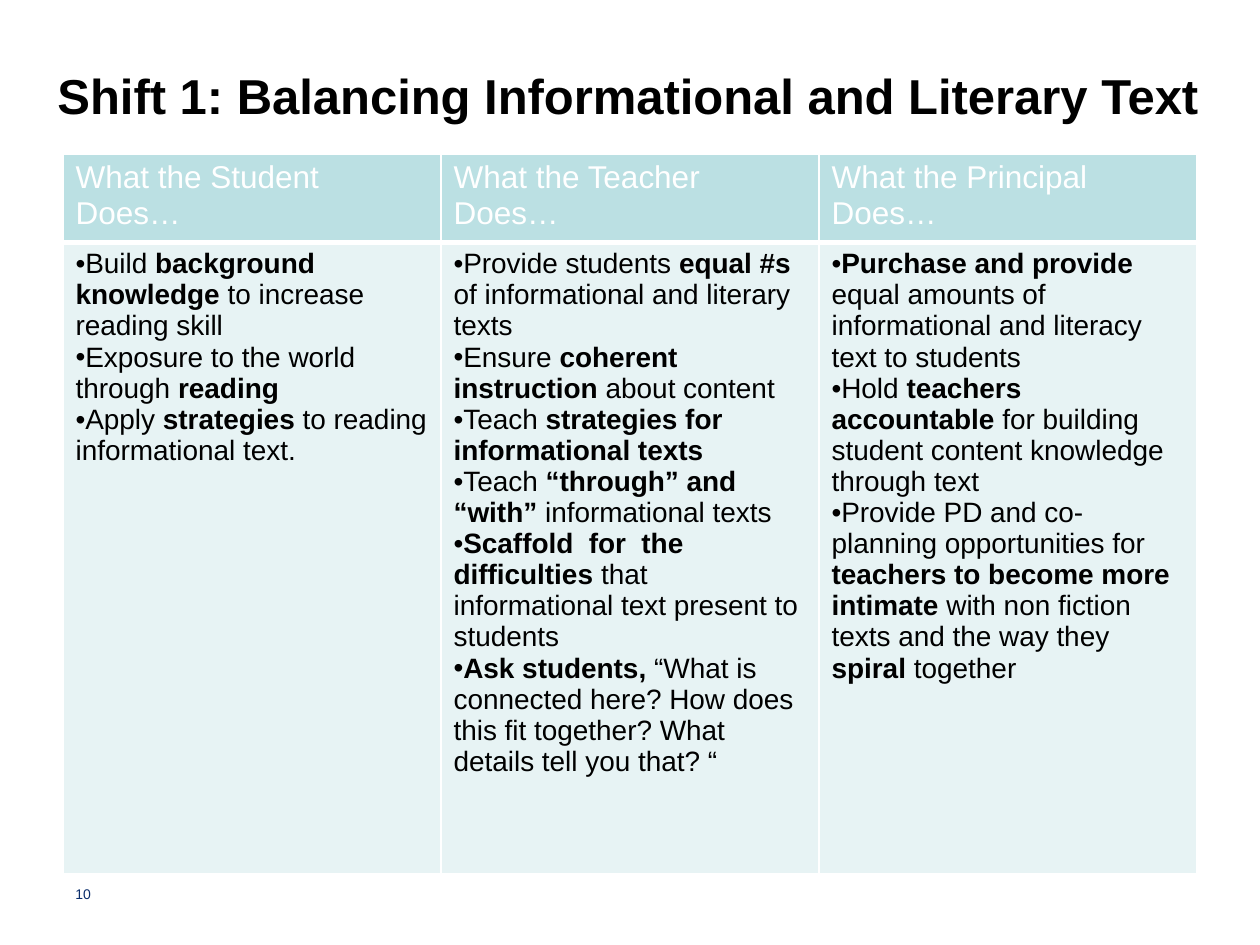
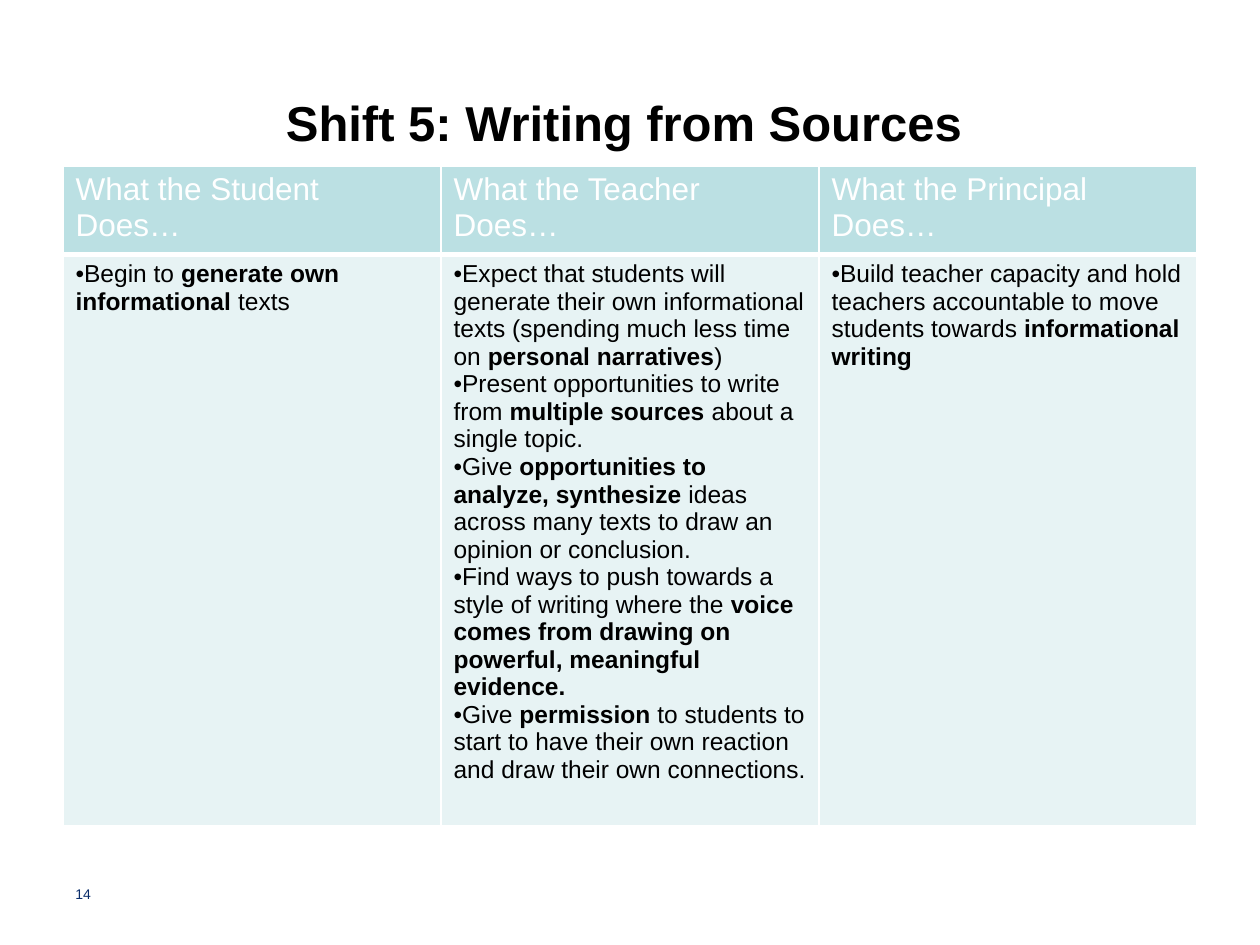
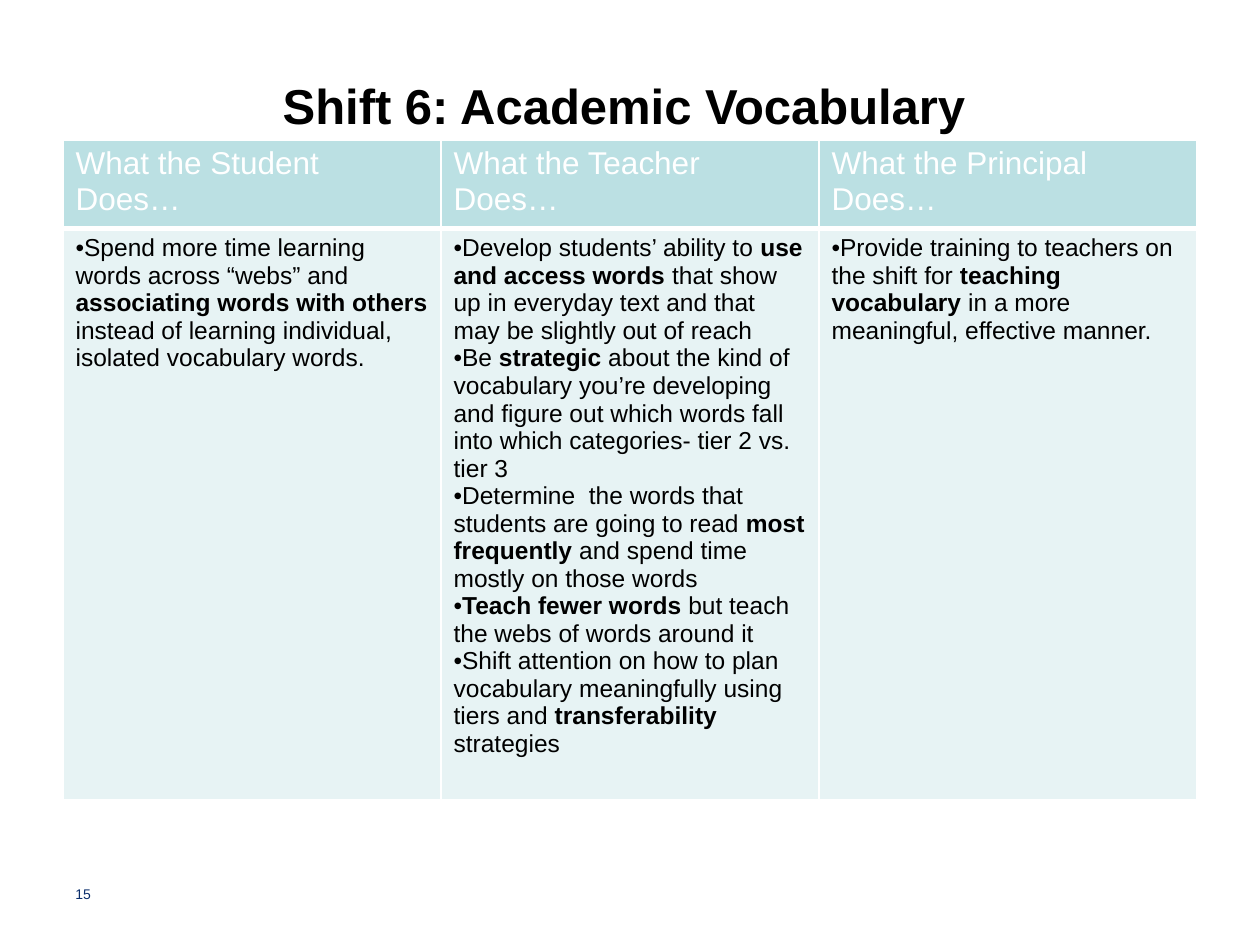
from dataclasses import dataclass

from pptx import Presentation
from pptx.dml.color import RGBColor
from pptx.enum.text import MSO_ANCHOR, PP_ALIGN
from pptx.oxml.ns import qn
from pptx.util import Emu, Pt
from lxml import etree

MIDDLE = MSO_ANCHOR.MIDDLE
CENTER, LEFT = PP_ALIGN.CENTER, PP_ALIGN.LEFT

EMU_PER_PX = 914400 / 126
PAGE_WIDTH, PAGE_HEIGHT = 1260, 945
BLANK_LAYOUT = 6
TABLE_LEFT, COLUMN_WIDTH, HEADER_HEIGHT = 63, 378, 83
HEADERS = ("What the Student Does…", "What the Teacher Does…", "What the Principal Does…")


@dataclass(frozen=True)
class Theme:
    font: str = "Arial"
    text: str = "000000"
    header_text: str = "FFFFFF"
    header_fill: str = "BBE0E3"
    body_fill: str = "E7F3F4"
    border: str = "FFFFFF"
    page_number: str = "0A2D6B"
    title_size: int = 28
    header_size: int = 18
    page_number_size: int = 8
    border_width: int = 1
    header_rule_width: int = 3


@dataclass(frozen=True)
class Box:
    left: int
    top: int
    width: int
    height: int


@dataclass(frozen=True)
class TextStyle:
    size: int
    color: str
    bold: bool = False


@dataclass(frozen=True)
class ShiftPage:
    """One shift; asterisks in the column texts enclose bold spans."""
    number: int
    title: str
    title_box: Box
    table_top: int
    body_height: int
    body_size: int
    columns: tuple[tuple[str, ...], ...]


THEME = Theme()
TITLE_STYLE = TextStyle(THEME.title_size, THEME.text, True)
HEADER_STYLE = TextStyle(THEME.header_size, THEME.header_text)
NUMBER_STYLE = TextStyle(THEME.page_number_size, THEME.page_number)
NUMBER_BOX = Box(63, 861, 294, 66)

PAGES = (
    ShiftPage(
        10, "Shift 1: Balancing Informational and Literary Text",
        Box(28, 53, 1200, 83), 154, 632, 16,
        (
            (
                "Build *background knowledge *to increase reading skill",
                "Exposure to the world through *reading*",
                "Apply *strategies* to reading informational text.",
            ),
            (
                "Provide students *equal #s *of informational and literary texts",
                "Ensure *coherent instruction *about content",
                "Teach *strategies for informational texts*",
                "Teach *“through” and “with” *informational texts",
                "*Scaffold  for  the difficulties *that informational text present to students",
                "*Ask students, *“What is connected here? How does this fit together? "
                "What details tell you that? “",
            ),
            (
                "*Purchase and provide *equal amounts of informational and literacy text "
                "to students",
                "Hold *teachers accountable *for building student content knowledge through text",
                "Provide PD and co-planning opportunities for *teachers to become more intimate "
                "*with non fiction texts and the way they *spiral *together",
            ),
        ),
    ),
    ShiftPage(
        14, "Shift 5: Writing from Sources",
        Box(57, 42, 1134, 160), 166, 563, 14,
        (
            ("Begin to *generate own informational *texts",),
            (
                "Expect that students will generate their own informational texts "
                "(spending much less time on *personal narratives*)",
                "Present opportunities to write from *multiple sources *about a single topic.",
                "Give *opportunities to analyze, synthesize* ideas across many texts "
                "to draw an opinion or conclusion.",
                "Find ways to push towards a style of writing where the "
                "*voice comes from drawing on powerful, meaningful evidence.*",
                "Give *permission *to students to start to have their own reaction "
                "and draw their own connections.",
            ),
            (
                "Build teacher capacity and hold teachers accountable to move students "
                "towards *informational writing*",
            ),
        ),
    ),
    ShiftPage(
        15, "Shift 6: Academic Vocabulary",
        Box(57, 25, 1134, 160), 140, 535, 14,
        (
            (
                "Spend more time learning words across “webs” and *associating words with others "
                "*instead of learning individual, isolated vocabulary words.",
            ),
            (
                "Develop students’ ability to *use and access words *that show up in everyday "
                "text and that may be slightly out of reach",
                "Be *strategic* about the kind of vocabulary you’re developing and figure out "
                "which words fall into which categories- tier 2 vs. tier 3",
                "Determine  the words that students are going to read *most frequently "
                "*and spend time mostly on those words",
                "*Teach fewer words *but teach the webs of words around it",
                "Shift attention on how to plan vocabulary meaningfully using tiers and "
                "*transferability *strategies",
            ),
            (
                "Provide training to teachers on the shift for *teaching vocabulary "
                "*in a more meaningful, effective manner.",
            ),
        ),
    ),
)


def px(length: int) -> Emu:
    return Emu(round(length * EMU_PER_PX))


def add_span(para, text: str, style: TextStyle) -> None:
    span = para.add_run()
    span.text = text
    span.font.name = THEME.font
    span.font.size = Pt(style.size)
    span.font.bold = style.bold
    span.font.color.rgb = RGBColor.from_string(style.color)


def add_text_box(page, box: Box, text: str, style: TextStyle, alignment: PP_ALIGN) -> None:
    shape = page.shapes.add_textbox(px(box.left), px(box.top), px(box.width), px(box.height))
    frame = shape.text_frame
    frame.word_wrap = True
    frame.vertical_anchor = MIDDLE
    para = frame.paragraphs[0]
    para.alignment = alignment
    add_span(para, text, style)


def add_bullet(para) -> None:
    properties = para._p.get_or_add_pPr()
    properties.set("marL", "0")
    properties.set("indent", "0")
    etree.SubElement(properties, qn("a:buFont"), typeface=THEME.font)
    etree.SubElement(properties, qn("a:buChar"), char="•")


def style_cell(cell, fill: str, bottom_width: int) -> None:
    properties = cell._tc.get_or_add_tcPr()
    for side in ("L", "R", "T", "B"):
        width = bottom_width if side == "B" else THEME.border_width
        line = etree.SubElement(properties, qn(f"a:ln{side}"), w=str(Pt(width)))
        line_fill = etree.SubElement(line, qn("a:solidFill"))
        etree.SubElement(line_fill, qn("a:srgbClr"), val=THEME.border)
    cell.fill.solid()
    cell.fill.fore_color.rgb = RGBColor.from_string(fill)


def fill_body_cell(cell, items: tuple[str, ...], size: int) -> None:
    frame = cell.text_frame
    for item_index, item in enumerate(items):
        para = frame.add_paragraph() if item_index else frame.paragraphs[0]
        add_bullet(para)
        for part_index, part in enumerate(item.split("*")):
            if part:
                add_span(para, part, TextStyle(size, THEME.text, part_index % 2 == 1))


def add_role_table(page, shift: ShiftPage) -> None:
    heights = (HEADER_HEIGHT, shift.body_height)
    table = page.shapes.add_table(
        len(heights), len(HEADERS), px(TABLE_LEFT), px(shift.table_top),
        px(COLUMN_WIDTH * len(HEADERS)), px(sum(heights)),
    ).table
    table.first_row = False
    table.horz_banding = False
    for row, height in zip(table.rows, heights):
        row.height = px(height)
    for index, (header, items) in enumerate(zip(HEADERS, shift.columns)):
        table.columns[index].width = px(COLUMN_WIDTH)
        header_cell, body_cell = table.cell(0, index), table.cell(1, index)
        style_cell(header_cell, THEME.header_fill, THEME.header_rule_width)
        add_span(header_cell.text_frame.paragraphs[0], header, HEADER_STYLE)
        style_cell(body_cell, THEME.body_fill, THEME.border_width)
        fill_body_cell(body_cell, items, shift.body_size)


def add_shift_page(deck, shift: ShiftPage) -> None:
    page = deck.slides.add_slide(deck.slide_layouts[BLANK_LAYOUT])
    add_text_box(page, shift.title_box, shift.title, TITLE_STYLE, CENTER)
    add_role_table(page, shift)
    add_text_box(page, NUMBER_BOX, str(shift.number), NUMBER_STYLE, LEFT)


def main() -> None:
    deck = Presentation()
    deck.slide_width, deck.slide_height = px(PAGE_WIDTH), px(PAGE_HEIGHT)
    for shift in PAGES:
        add_shift_page(deck, shift)
    deck.save("out.pptx")


if __name__ == "__main__":
    main()
